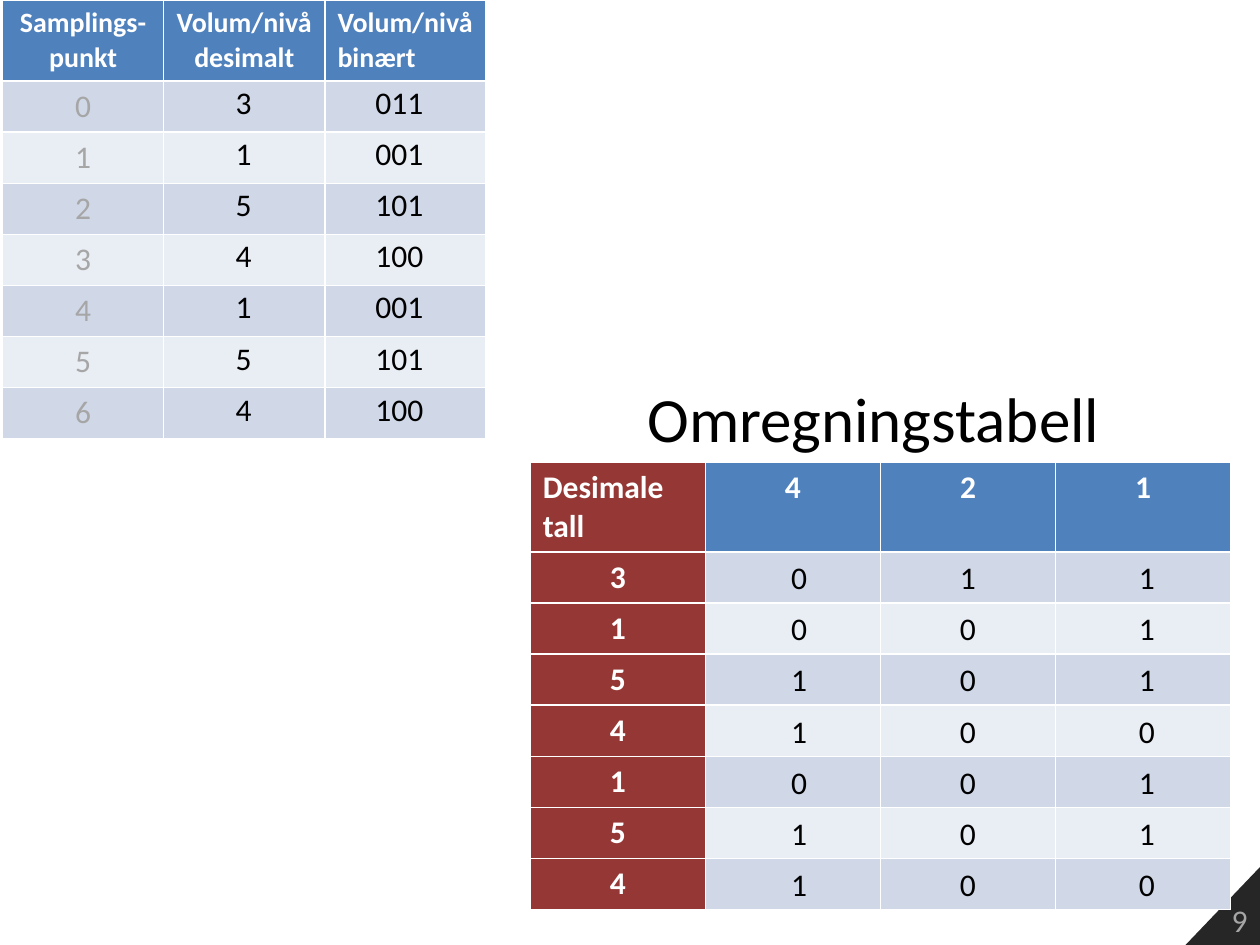
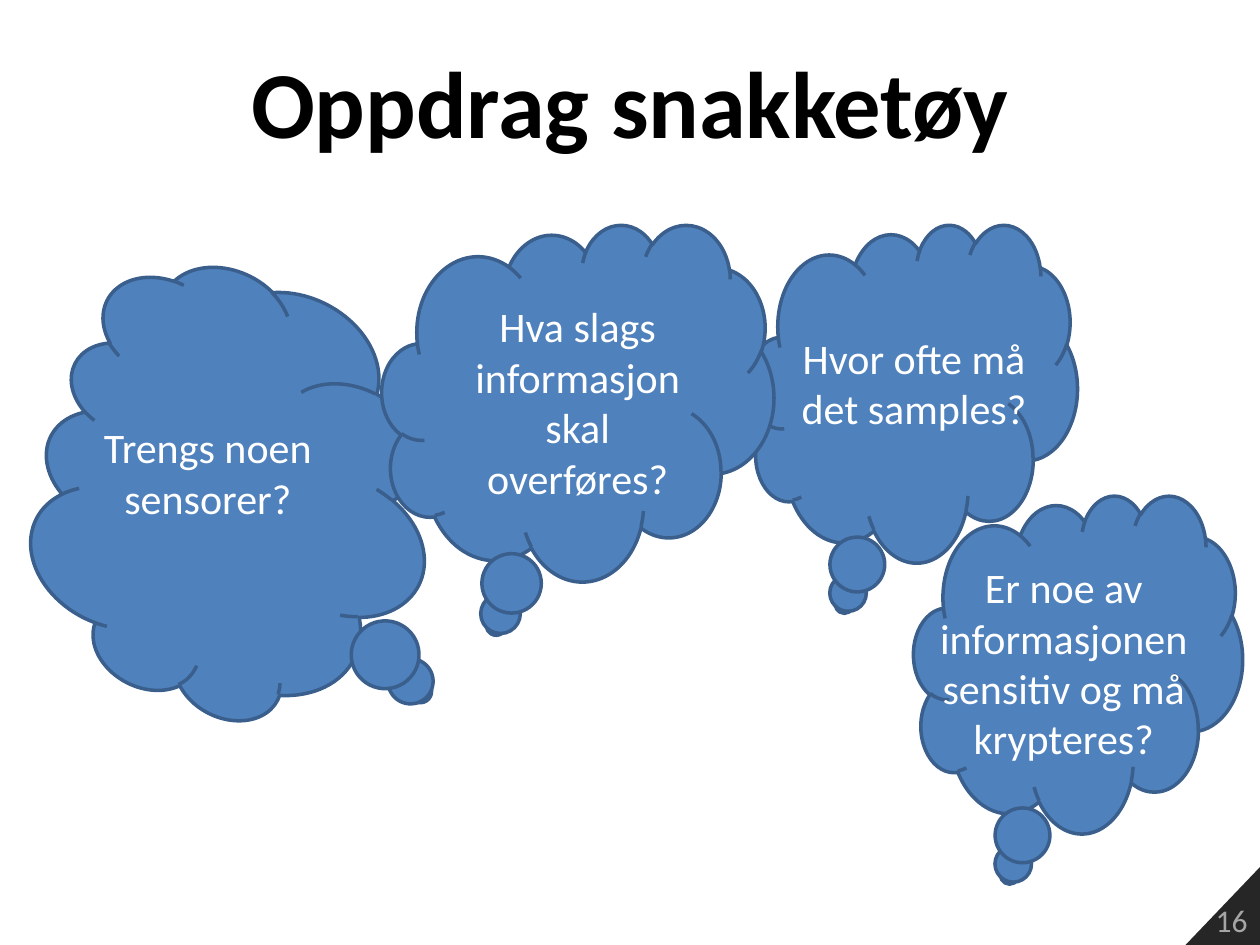
import pptx
import pptx.dml.color
import pptx.enum.shapes
import pptx.enum.text
import pptx.util
from dataclasses import dataclass

Cm, Pt = pptx.util.Cm, pptx.util.Pt
ALIGN = pptx.enum.text.PP_ALIGN
ANCHOR = pptx.enum.text.MSO_ANCHOR
SHAPE = pptx.enum.shapes.MSO_SHAPE

# Content
LEVELS = [3, 1, 5, 4, 1, 5, 4]
BITS = [format(level, "03b") for level in LEVELS]

SAMPLES = {
    "at": (0.05, 0), "col": 3.25, "head_height": 1.6, "head_size": 16,
    "head": [("Samplings-punkt", ALIGN.CENTER), ("Volum/nivå\ndesimalt", ALIGN.CENTER),
             ("Volum/nivå\nbinært", ALIGN.LEFT)],
    "labels": range(len(LEVELS)), "red": False,
    # left edge, box width and values of each column of answers
    "answers_top": 1.55,
    "answers": [(4.5, 1, LEVELS), (7.32, 1.6, BITS)],
}
CONVERSION = {
    "at": (10.69, 9.32), "col": 3.53, "head_height": 1.78, "head_size": 18,
    "head": [("Desimale\ntall", ALIGN.LEFT)] + [(n, ALIGN.CENTER) for n in "421"],
    "labels": LEVELS, "red": True,
    "answers_top": 11.13,
    "answers": [(left, 1, [b[i] for b in BITS])
                for i, left in enumerate((15.7, 19.1, 22.71))],
}
TABLE_TITLE = ("Omregningstabell", (6.18, 7.52, 22.86, 2.39))
TASK_TITLE = ("Oppdrag snakketøy", (1.27, 0.76, 22.86, 3.18))

# Question, cloud box, cloud rotation, text box
QUESTIONS = [
    ("Hvor ofte må det samples?", (15.09, 4.52, 6.63, 6.81), 0, (15.62, 6.58, 5.61, 2.31)),
    ("Trengs noen sensorer?", (0.41, 5.92, 8.61, 8.2), 296.9, (1.7, 8.38, 4.98, 2.31)),
    ("Hva slags informasjon skal overføres?", (7.7, 4.52, 7.9, 7.19), 0,
     (8.84, 5.94, 5.61, 3.33)),
    ("Er noe av informasjonen sensitiv og må krypteres?", (18.42, 9.98, 6.63, 6.81), 0,
     (18.64, 11.2, 5.61, 4.37)),
]


@dataclass(frozen=True)
class Theme:
    font: str = "Calibri"
    black: str = "000000"
    white: str = "FFFFFF"
    grey: str = "A6A6A6"
    corner: str = "262626"
    blue: str = "4F81BD"
    outline: str = "3A5F8C"
    red: str = "953735"
    bands: tuple = ("D0D8E8", "E9EDF4")
    body: int = 18
    question: int = 24
    subtitle: int = 36
    title: int = 54


T = Theme()
WIDTH, HEIGHT = 25.4, 19.05
ROW = 1.03


# Helpers
def rgb(value):
    return pptx.dml.color.RGBColor.from_string(value)


def fill(target, color):
    target.fill.solid()
    target.fill.fore_color.rgb = rgb(color)


def write(tf, text, size, color, align=ALIGN.LEFT, bold=False):
    tf.text = str(text)
    tf.word_wrap = True
    for p in tf.paragraphs:
        p.alignment = align
        for r in p.runs:
            r.font.name, r.font.size, r.font.bold = T.font, Pt(size), bold
            r.font.color.rgb = rgb(color)


def add_text(s, box, *args, **style):
    sp = s.shapes.add_textbox(*map(Cm, box))
    write(sp.text_frame, *args, **style)


def add_slide(prs, number):
    """Blank slide with the dark corner that holds the slide number."""
    s = prs.slides.add_slide(prs.slide_layouts[6])
    left, top = 23.9, 17.48
    fb = s.shapes.build_freeform(Cm(left), Cm(HEIGHT))
    fb.add_line_segments([(Cm(WIDTH), Cm(top)), (Cm(WIDTH), Cm(HEIGHT))], close=True)
    sp = fb.convert_to_shape()
    sp.shadow.inherit = False
    fill(sp, T.corner)
    sp.line.fill.background()
    write(sp.text_frame, number, T.body, T.grey, ALIGN.RIGHT)
    sp.text_frame.vertical_anchor = ANCHOR.BOTTOM
    return s


def add_level_table(s, spec):
    rows, cols = len(LEVELS) + 1, len(spec["head"])
    left, top = spec["at"]
    height = spec["head_height"] + ROW * len(LEVELS)
    table = s.shapes.add_table(rows, cols, Cm(left), Cm(top),
                               Cm(spec["col"] * cols), Cm(height)).table
    for col in table.columns:
        col.width = Cm(spec["col"])
    for i, row in enumerate(table.rows):
        row.height = Cm(ROW if i else spec["head_height"])
        for j, cell in enumerate(row.cells):
            red = spec["red"] and j == 0
            fill(cell, T.red if red else T.bands[(i - 1) % 2] if i else T.blue)
    for j, (text, align) in enumerate(spec["head"]):
        write(table.cell(0, j).text_frame, text, spec["head_size"], T.white, align, True)
    for i, label in enumerate(spec["labels"], 1):
        color = T.white if spec["red"] else T.grey
        write(table.cell(i, 0).text_frame, label, T.body, color, ALIGN.CENTER, spec["red"])


def add_answers(s, spec):
    for left, width, values in spec["answers"]:
        for i, value in enumerate(values):
            add_text(s, (left, spec["answers_top"] + ROW * i, width, 1.02),
                     value, T.body, T.black)


def add_question(s, text, cloud, rotation, text_box):
    sp = s.shapes.add_shape(SHAPE.CLOUD_CALLOUT, *map(Cm, cloud))
    sp.rotation = rotation
    sp.shadow.inherit = False
    fill(sp, T.blue)
    sp.line.color.rgb = rgb(T.outline)
    sp.line.width = Pt(2)
    add_text(s, text_box, text, T.question, T.white, align=ALIGN.CENTER)


def main():
    prs = pptx.Presentation()
    prs.slide_width, prs.slide_height = Cm(WIDTH), Cm(HEIGHT)

    # Sampling levels and their conversion to binary
    s = add_slide(prs, 9)
    for spec in (SAMPLES, CONVERSION):
        add_level_table(s, spec)
    for spec in (SAMPLES, CONVERSION):
        add_answers(s, spec)
    text, box = TABLE_TITLE
    add_text(s, box, text, T.subtitle, T.black, align=ALIGN.CENTER)

    # Questions for the task
    s = add_slide(prs, 16)
    text, box = TASK_TITLE
    add_text(s, box, text, T.title, T.black, align=ALIGN.CENTER, bold=True)
    for question in QUESTIONS:
        add_question(s, *question)

    prs.save("out.pptx")


if __name__ == "__main__":
    main()
